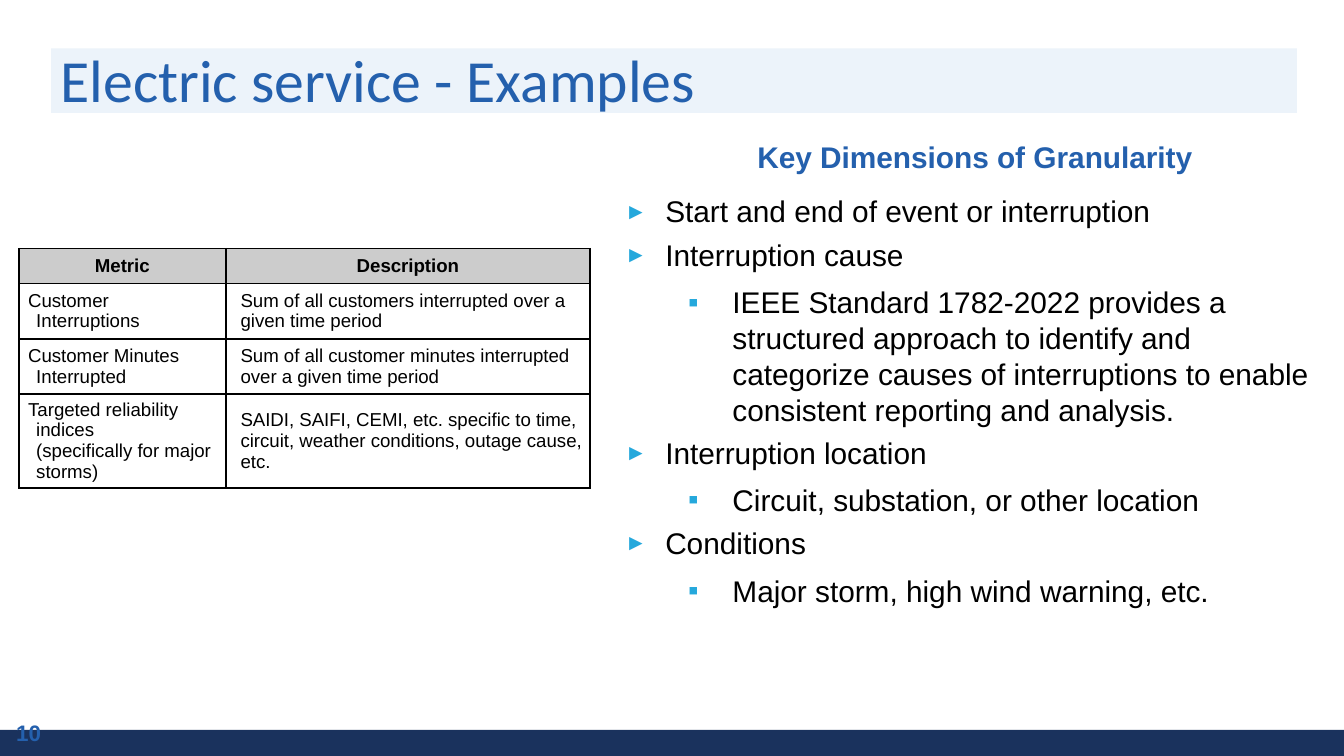
"""Build the slide on electric service examples."""
from lxml import etree
from pptx import Presentation
from pptx.dml.color import RGBColor
from pptx.enum.shapes import MSO_SHAPE
from pptx.enum.text import MSO_ANCHOR, MSO_AUTO_SIZE, PP_ALIGN
from pptx.oxml.ns import qn
from pptx.util import Inches, Pt

RECT = MSO_SHAPE.RECTANGLE
TOP, MIDDLE, BOTTOM = MSO_ANCHOR.TOP, MSO_ANCHOR.MIDDLE, MSO_ANCHOR.BOTTOM
LEFT, CENTER = PP_ALIGN.LEFT, PP_ALIGN.CENTER
FIXED = MSO_AUTO_SIZE.NONE

BLUE = RGBColor(0x24, 0x60, 0xAD)
NAVY = RGBColor(0x1A, 0x32, 0x5D)
PALE = RGBColor(0xEC, 0xF3, 0xFA)
CYAN = RGBColor(0x25, 0xA8, 0xDC)
GREY = RGBColor(0xCC, 0xCC, 0xCC)
WHITE = RGBColor(0xFF, 0xFF, 0xFF)
BLACK = RGBColor(0, 0, 0)

WIDE = 10
HIGH = WIDE * 9 / 16
FOOT = 5.43
COLS = (1.54, 2.71)
ROWS = (0.26, 0.41, 0.41, 0.7)
HEADS = ("Metric", "Description")
METRICS = (
    ("Customer Interruptions",
     "Sum of all customers interrupted over a given time period"),
    ("Customer Minutes Interrupted",
     "Sum of all customer minutes interrupted over a given time period"),
    ("Targeted reliability indices \v(specifically for major storms)",
     "SAIDI, SAIFI, CEMI, etc. specific to time, circuit, weather "
     "conditions, outage cause, etc."),
)
POINTS = (
    (0, "Start and end of event or interruption"),
    (0, "Interruption cause"),
    (1, "IEEE Standard 1782-2022 provides a structured approach to identify "
        "and categorize causes of interruptions to enable consistent "
        "reporting and analysis."),
    (0, "Interruption location"),
    (1, "Circuit, substation, or other location"),
    (0, "Conditions"),
    (1, "Major storm, high wind warning, etc."),
)
LEVELS = (("►", 75, 0.5, -0.3, 0.9), ("▪", 100, 1, -0.33, 1))


def add_bar(slide, box, color):
    """Add a plain filled rectangle."""
    bar = slide.shapes.add_shape(RECT, *map(Inches, box))
    bar.shadow.inherit = False
    bar.fill.solid()
    bar.fill.fore_color.rgb = color
    bar.line.fill.background()


def set_font(para, size, color, bold=False, name="Arial"):
    """Set the font of a whole paragraph."""
    font = para.font
    font.name, font.size, font.bold = name, Pt(size), bold
    font.color.rgb = color


def set_indent(para, left, first=0):
    """Set the left margin and first-line indent."""
    props = para._p.get_or_add_pPr()
    props.set("marL", str(Inches(left)))
    props.set("indent", str(Inches(first)))
    return props


def set_frame(frame, anchor):
    """Give a text frame its margins, anchor and wrapping."""
    frame.auto_size = FIXED
    frame.word_wrap = True
    frame.vertical_anchor = anchor
    frame.margin_left = frame.margin_right = Inches(0.07)
    frame.margin_top = frame.margin_bottom = Inches(0.03)


def add_box(slide, box, anchor):
    """Add a text box and return its frame."""
    frame = slide.shapes.add_textbox(*map(Inches, box)).text_frame
    set_frame(frame, anchor)
    return frame


def set_title(slide, text):
    """Fill the title and bring it in front of its band."""
    title = slide.shapes.title
    title.left, title.top, title.width, title.height = map(
        Inches, (0.38, 0.51, 9, 0.38))
    title._element.getparent().append(title._element)
    title.text = text
    set_frame(title.text_frame, BOTTOM)
    para = title.text_frame.paragraphs[0]
    para.alignment = LEFT
    para.line_spacing = 0.9
    set_font(para, 32, BLUE, name="Calibri")


def set_bullet(props, char, size):
    """Give a paragraph a coloured bullet."""
    color = etree.SubElement(props, qn("a:buClr"))
    etree.SubElement(color, qn("a:srgbClr"), val=str(CYAN))
    etree.SubElement(props, qn("a:buSzPct"), val=str(size * 1000))
    etree.SubElement(props, qn("a:buFont"), typeface="Arial")
    etree.SubElement(props, qn("a:buChar"), char=char)


def add_points(slide):
    """Add the heading and its bulleted list."""
    frame = add_box(slide, (4.38, 1.03, 5.55, 2.69), TOP)
    head = frame.paragraphs[0]
    head.text = "Key Dimensions of Granularity"
    head.alignment = CENTER
    head.line_spacing = 0.9
    head.space_after = Pt(12)
    set_indent(head, 0.2)
    set_font(head, 16, BLUE, True)
    for level, text in POINTS:
        char, size, left, first, lines = LEVELS[level]
        para = frame.add_paragraph()
        para.text, para.level = text, level
        para.line_spacing = lines
        para.space_after = Pt(6)
        set_bullet(set_indent(para, left, first), char, size)
        set_font(para, 16, BLACK)


def set_cell(cell, text, fill, pads):
    """Fill a table cell and draw its borders."""
    cell.text = text
    cell.vertical_anchor = MIDDLE
    cell.margin_left = cell.margin_right = Inches(pads[0])
    cell.margin_top = cell.margin_bottom = Inches(pads[1])
    props = cell._tc.get_or_add_tcPr()
    for side in ("a:lnL", "a:lnR", "a:lnT", "a:lnB"):
        line = etree.SubElement(props, qn(side), w=str(Pt(1)))
        solid = etree.SubElement(line, qn("a:solidFill"))
        etree.SubElement(solid, qn("a:srgbClr"), val=str(BLACK))
    cell.fill.solid()
    cell.fill.fore_color.rgb = fill


def add_metrics(slide):
    """Add the table of metrics."""
    box = map(Inches, (0.14, 1.85, sum(COLS), sum(ROWS)))
    table = slide.shapes.add_table(len(ROWS), len(COLS), *box).table
    table.first_row = table.horz_banding = False
    for col, width in zip(table.columns, COLS):
        col.width = Inches(width)
    for row, high in zip(table.rows, ROWS):
        row.height = Inches(high)
    for r, texts in enumerate((HEADS, *METRICS)):
        for c, text in enumerate(texts):
            cell = table.cell(r, c)
            pads = ((0.07, 0.04), (0.05, 0.05))[c] if r else (0.1, 0.05)
            set_cell(cell, text, WHITE if r else GREY, pads)
            para = cell.text_frame.paragraphs[0]
            if r:
                set_indent(para, 0.06, 0 if c else -0.06)
            else:
                para.alignment = CENTER
            set_font(para, 10, BLACK, not r)


def main():
    """Build and save the slide."""
    deck = Presentation()
    deck.slide_width, deck.slide_height = Inches(WIDE), Inches(HIGH)
    slide = deck.slides.add_slide(deck.slide_layouts[5])
    add_bar(slide, (0.38, 0.36, 9.27, 0.48), PALE)
    add_bar(slide, (0, FOOT, WIDE, HIGH - FOOT), NAVY)
    set_title(slide, "Electric service - Examples")
    page = add_box(slide, (0.05, 5.3, 2.25, 0.3), MIDDLE).paragraphs[0]
    page.text = "10"
    set_font(page, 12, BLUE, True)
    add_metrics(slide)
    add_points(slide)
    deck.save("out.pptx")


if __name__ == "__main__":
    main()
